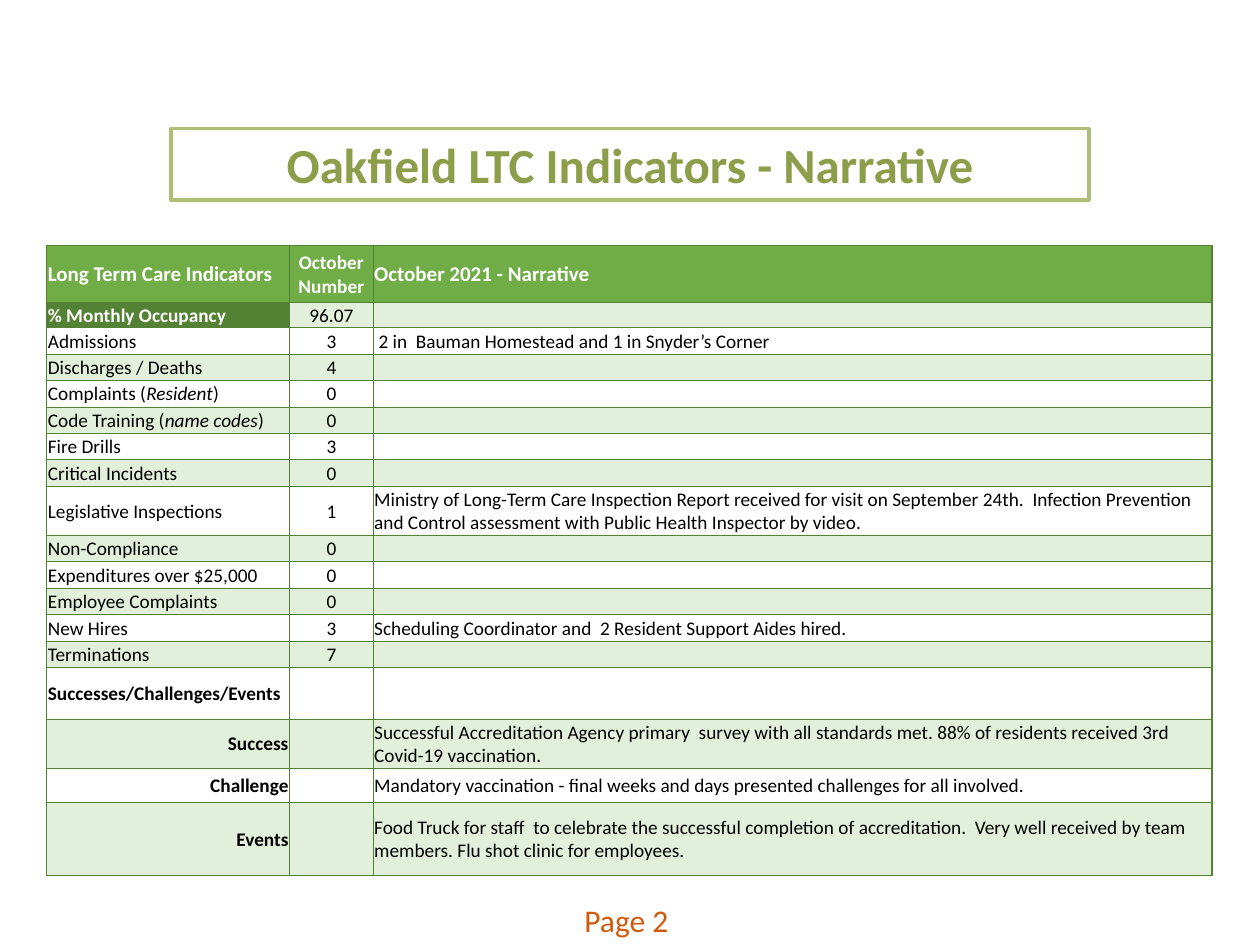
from dataclasses import dataclass
from typing import NamedTuple

import pptx
import pptx.dml.color
import pptx.enum.shapes
import pptx.enum.text
import pptx.oxml
import pptx.oxml.ns
import pptx.util
from pptx.util import Inches

Align = pptx.enum.text.PP_ALIGN
Anchor = pptx.enum.text.MSO_ANCHOR


@dataclass(frozen=True)
class Theme:
    font: str = "Calibri"
    white: str = "FFFFFF"
    black: str = "000000"
    title: str = "8C9E4A"
    title_line: str = "AFBF76"
    page_number: str = "CF5A0B"
    header: str = "70AD47"
    dark: str = "548235"
    band: str = "E2EFDA"
    title_size: float = 28
    page_size: float = 18
    header_size: float = 12
    body_size: float = 11
    title_line_width: float = 2.25
    outer_line: float = 1
    inner_line: float = 0.5


class Indicator(NamedTuple):
    """One table row; text between asterisks in the label is italic."""
    label: str
    number: str = ""
    narrative: str = ""
    height: float = 0.21
    bold: bool = False
    align: Align = Align.LEFT


THEME = Theme()
COLUMN_WIDTHS = (1.93, 0.66, 6.66)
INDICATORS = (
    Indicator("Long Term Care Indicators", "October\vNumber", "October 2021 - Narrative", 0.45, True),
    Indicator("% Monthly Occupancy", "96.07", height=0.2, bold=True),
    Indicator("Admissions", "3", " 2 in  Bauman Homestead and 1 in Snyder’s Corner"),
    Indicator("Discharges / Deaths", "4"),
    Indicator("Complaints (*Resident*)", "0"),
    Indicator("Code Training (*name codes*)", "0"),
    Indicator("Fire Drills", "3"),
    Indicator("Critical Incidents", "0"),
    Indicator("Legislative Inspections", "1",
              "Ministry of Long-Term Care Inspection Report received for visit on September 24th.  "
              "Infection Prevention and Control assessment with Public Health Inspector by video.",
              0.39),
    Indicator("Non-Compliance", "0"),
    Indicator("Expenditures over $25,000", "0"),
    Indicator("Employee Complaints", "0"),
    Indicator("New Hires", "3", "Scheduling Coordinator and  2 Resident Support Aides hired."),
    Indicator("Terminations", "7"),
    Indicator("Successes/Challenges/Events", height=0.41, bold=True),
    Indicator("Success", "",
              "Successful Accreditation Agency primary  survey with all standards met. "
              "88% of residents received 3rd Covid-19 vaccination.", 0.39, True, Align.RIGHT),
    Indicator("Challenge", "",
              "Mandatory vaccination - final weeks and days presented challenges for all involved.",
              0.27, True, Align.RIGHT),
    Indicator("Events", "",
              "Food Truck for staff  to celebrate the successful completion of accreditation.  "
              "Very well received by team members. Flu shot clinic for employees.",
              0.58, True, Align.RIGHT),
)


def rgb(value: str) -> pptx.dml.color.RGBColor:
    return pptx.dml.color.RGBColor.from_string(value)


def write(para, text: str, size: float, color: str, bold: bool = False, align: Align = Align.LEFT) -> None:
    pieces = text.split("*")
    if len(pieces) == 1:
        para.text = text
    else:
        for index, piece in enumerate(pieces):
            span = para.add_run()
            span.text = piece
            span.font.italic = index % 2 == 1
    para.alignment = align
    para.font.name = THEME.font
    para.font.size = pptx.util.Pt(size)
    para.font.bold = bold
    para.font.color.rgb = rgb(color)
    if not text:
        # An empty cell takes its line height from the end mark.
        end_mark = para._p.get_or_add_endParaRPr()
        end_mark.set("sz", str(int(size * 100)))


def set_borders(cell, widths: dict[str, float]) -> None:
    properties = cell._tc.get_or_add_tcPr()
    for index, side in enumerate("LRTB"):
        line = pptx.oxml.parse_xml(
            f'<a:ln{side} {pptx.oxml.ns.nsdecls("a")} w="{pptx.util.Pt(widths[side])}">'
            f'<a:solidFill><a:srgbClr val="{THEME.dark}"/></a:solidFill></a:ln{side}>')
        properties.insert(index, line)


def fill_for(row: int, column: int) -> str | None:
    if row == 0:
        return THEME.header
    if (row, column) == (1, 0):
        return THEME.dark
    return THEME.band if row % 2 else None


def draw_cell(cell, row: int, column: int, indicator: Indicator) -> None:
    cell.margin_left = cell.margin_right = cell.margin_top = Inches(0.01)
    cell.margin_bottom = 0
    cell.vertical_anchor = Anchor.MIDDLE
    fill = fill_for(row, column)
    if fill:
        cell.fill.solid()
        cell.fill.fore_color.rgb = rgb(fill)
    else:
        cell.fill.background()
    at_edge = {"L": column == 0, "R": column == len(COLUMN_WIDTHS) - 1,
               "T": row == 0, "B": row == len(INDICATORS) - 1}
    set_borders(cell, {side: THEME.outer_line if edge else THEME.inner_line
                       for side, edge in at_edge.items()})
    is_header = row == 0
    write(cell.text_frame.paragraphs[0],
          (indicator.label, indicator.number, indicator.narrative)[column],
          THEME.header_size if is_header and column != 1 else THEME.body_size,
          THEME.white if fill in (THEME.header, THEME.dark) else THEME.black,
          is_header or (column == 0 and indicator.bold),
          (indicator.align, Align.CENTER, Align.LEFT)[column])


def draw_indicators(page) -> None:
    frame = page.shapes.add_table(
        len(INDICATORS), len(COLUMN_WIDTHS), Inches(0.37), Inches(1.95),
        Inches(sum(COLUMN_WIDTHS)), Inches(sum(item.height for item in INDICATORS)))
    table = frame.table
    table.first_row = table.horz_banding = False
    for column, width in zip(table.columns, COLUMN_WIDTHS):
        column.width = Inches(width)
    for row, indicator in enumerate(INDICATORS):
        table.rows[row].height = Inches(indicator.height)
        for column in range(len(COLUMN_WIDTHS)):
            draw_cell(table.cell(row, column), row, column, indicator)


def draw_title(page) -> None:
    box = page.shapes.add_shape(pptx.enum.shapes.MSO_SHAPE.RECTANGLE,
                                Inches(1.36), Inches(1.02), Inches(7.28), Inches(0.57))
    box.shadow.inherit = False
    box.fill.solid()
    box.fill.fore_color.rgb = rgb(THEME.white)
    box.line.color.rgb = rgb(THEME.title_line)
    box.line.width = pptx.util.Pt(THEME.title_line_width)
    box.text_frame.word_wrap = True
    box.text_frame.auto_size = pptx.enum.text.MSO_AUTO_SIZE.SHAPE_TO_FIT_TEXT
    write(box.text_frame.paragraphs[0], "Oakfield LTC Indicators - Narrative",
          THEME.title_size, THEME.title, True, Align.CENTER)


def draw_page_number(page) -> None:
    box = page.shapes.add_textbox(Inches(4.54), Inches(7.1), Inches(2.33), Inches(0.4))
    box.text_frame.word_wrap = True
    write(box.text_frame.paragraphs[0], "Page 2", THEME.page_size, THEME.page_number)


def main() -> None:
    deck = pptx.Presentation()
    deck.slide_width, deck.slide_height = Inches(10), Inches(7.5)
    page = deck.slides.add_slide(deck.slide_layouts[6])
    draw_title(page)
    draw_page_number(page)
    draw_indicators(page)
    deck.save("out.pptx")


if __name__ == "__main__":
    main()
